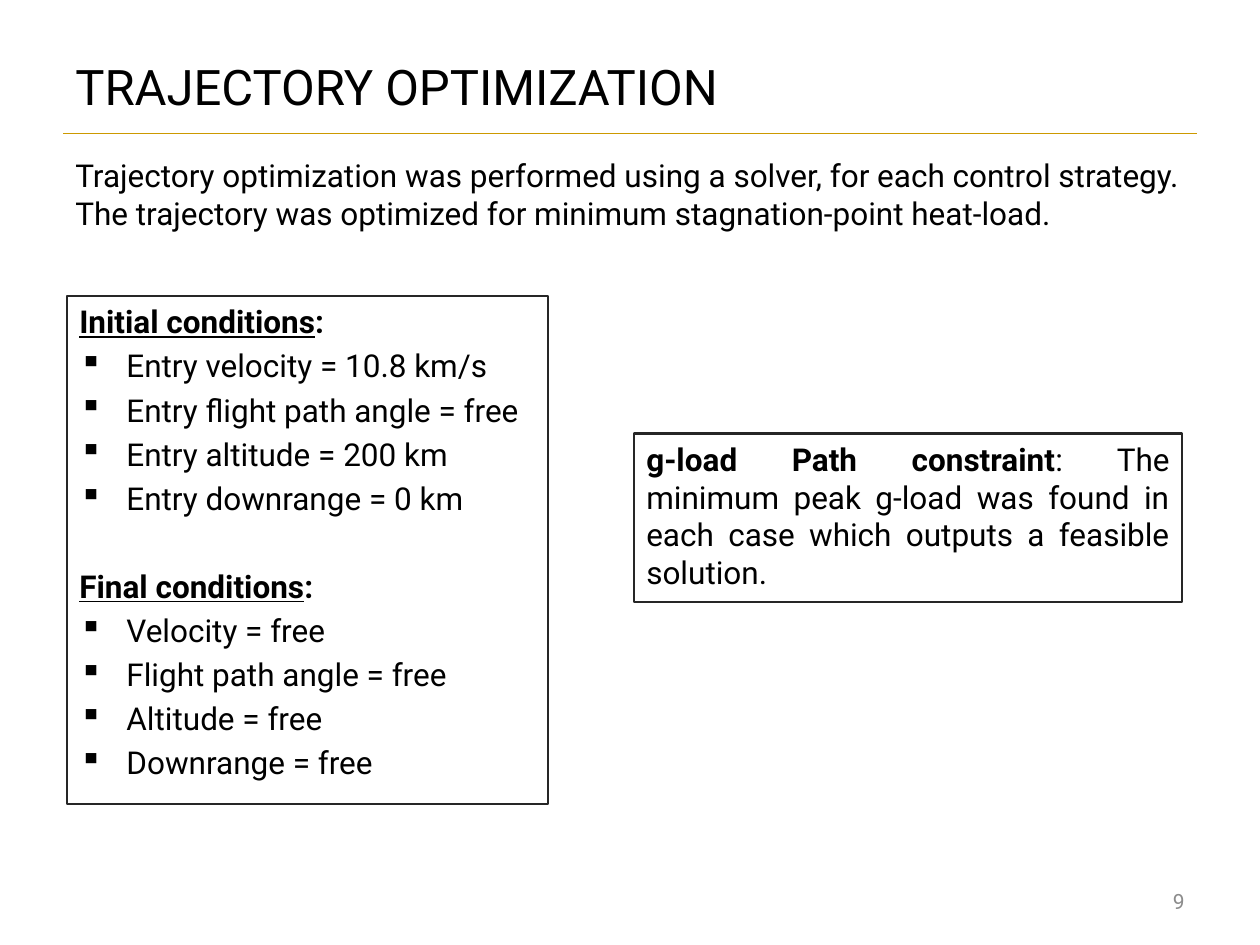
from lxml.etree import SubElement
from pptx import Presentation
from pptx.dml.color import RGBColor
from pptx.enum.shapes import MSO_CONNECTOR, MSO_SHAPE
from pptx.enum.text import MSO_ANCHOR, PP_ALIGN
from pptx.oxml.ns import qn
from pptx.util import Cm, Pt

FONT = "Roboto"
COLORS = {"text": "000000", "rule": "CC9900", "border": "262626", "number": "8C8C8C"}
INDENT = Cm(0.95)
GAP = 3.6
SECTION_GAP = 28.7

CONDITIONS = {
    "Initial conditions": [
        "Entry velocity = 10.8 km/s",
        "Entry flight path angle = free",
        "Entry altitude = 200 km",
        "Entry downrange = 0 km",
    ],
    "Final conditions": [
        "Velocity = free",
        "Flight path angle = free",
        "Altitude = free",
        "Downrange = free",
    ],
}


def color(name):
    return RGBColor.from_string(COLORS[name])


def add_run(p, text, size=18, fill="text", bold=False, underline=False):
    r = p.add_run()
    r.text = text
    r.font.name = FONT
    r.font.size = Pt(size)
    r.font.color.rgb = color(fill)
    r.font.bold = bold
    r.font.underline = underline


def add_bullet(p):
    pPr = p._p.get_or_add_pPr()
    pPr.set("marL", str(INDENT))
    pPr.set("indent", str(-INDENT))
    SubElement(pPr, qn("a:buChar")).set("char", "▪")


def add_paragraph(tf, before=GAP):
    p = tf.add_paragraph()
    p.space_before = Pt(before)
    return p


def add_text(s, text, x, y, w, h, anchor=MSO_ANCHOR.TOP, align=PP_ALIGN.LEFT, **fmt):
    tf = s.shapes.add_textbox(Cm(x), Cm(y), Cm(w), Cm(h)).text_frame
    tf.word_wrap = True
    tf.vertical_anchor = anchor
    p = tf.paragraphs[0]
    p.alignment = align
    add_run(p, text, **fmt)


def add_box(s, x, y, w, h, line_width, align=PP_ALIGN.LEFT):
    sp = s.shapes.add_shape(MSO_SHAPE.RECTANGLE, Cm(x), Cm(y), Cm(w), Cm(h))
    sp.shadow.inherit = False
    sp.fill.background()
    sp.line.color.rgb = color("border")
    sp.line.width = Pt(line_width)
    tf = sp.text_frame
    tf.word_wrap = True
    tf.vertical_anchor = MSO_ANCHOR.TOP
    tf.paragraphs[0].alignment = align
    return tf


def add_rule(s, x, y, w):
    line = s.shapes.add_connector(MSO_CONNECTOR.STRAIGHT, Cm(x), Cm(y), Cm(x + w), Cm(y))
    line.line.color.rgb = color("rule")
    line.line.width = Pt(1)
    SubElement(line._element.spPr, qn("a:effectLst"))


def fill_conditions(tf):
    for i, (heading, items) in enumerate(CONDITIONS.items()):
        p = add_paragraph(tf, SECTION_GAP) if i else tf.paragraphs[0]
        p.alignment = PP_ALIGN.LEFT
        add_run(p, heading, bold=True, underline=True)
        add_run(p, ":", bold=True)
        for item in items:
            p = add_paragraph(tf)
            p.alignment = PP_ALIGN.LEFT
            add_bullet(p)
            add_run(p, item)


def main():
    prs = Presentation()
    prs.slide_width, prs.slide_height = Cm(25.4), Cm(19.05)
    s = prs.slides.add_slide(prs.slide_layouts[6])

    add_rule(s, 1.27, 2.69, 22.86)
    add_text(s, "TRAJECTORY OPTIMIZATION", 1.27, 0.76, 20.37, 1.93,
             anchor=MSO_ANCHOR.MIDDLE, size=28)
    add_text(s, "Trajectory optimization was performed using a solver, for each control "
                "strategy. The trajectory was optimized for minimum stagnation-point "
                "heat-load.", 1.27, 3.02, 22.86, 1.83)
    add_text(s, "9", 21.82, 17.65, 2.31, 1.02, anchor=MSO_ANCHOR.MIDDLE,
             align=PP_ALIGN.RIGHT, size=12, fill="number")

    fill_conditions(add_box(s, 1.35, 5.97, 9.7, 10.24, 0.75))

    tf = add_box(s, 12.78, 8.74, 11.05, 3.4, 1.5, align=PP_ALIGN.JUSTIFY)
    p = tf.paragraphs[0]
    add_run(p, "g-load Path constraint", bold=True)
    add_run(p, ": The minimum peak g-load was found in each case which outputs "
               "a feasible solution.")

    prs.save("out.pptx")


if __name__ == "__main__":
    main()
